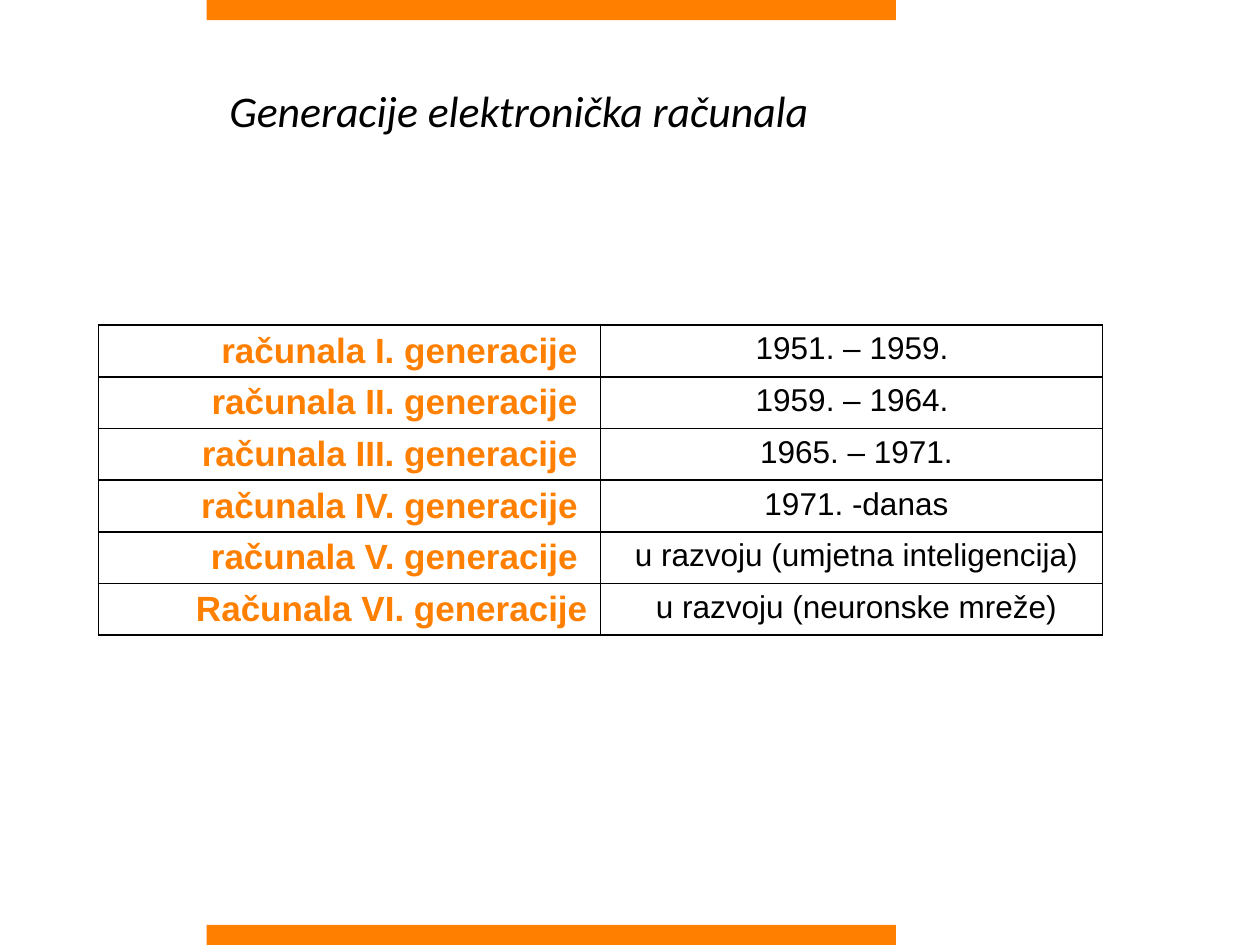
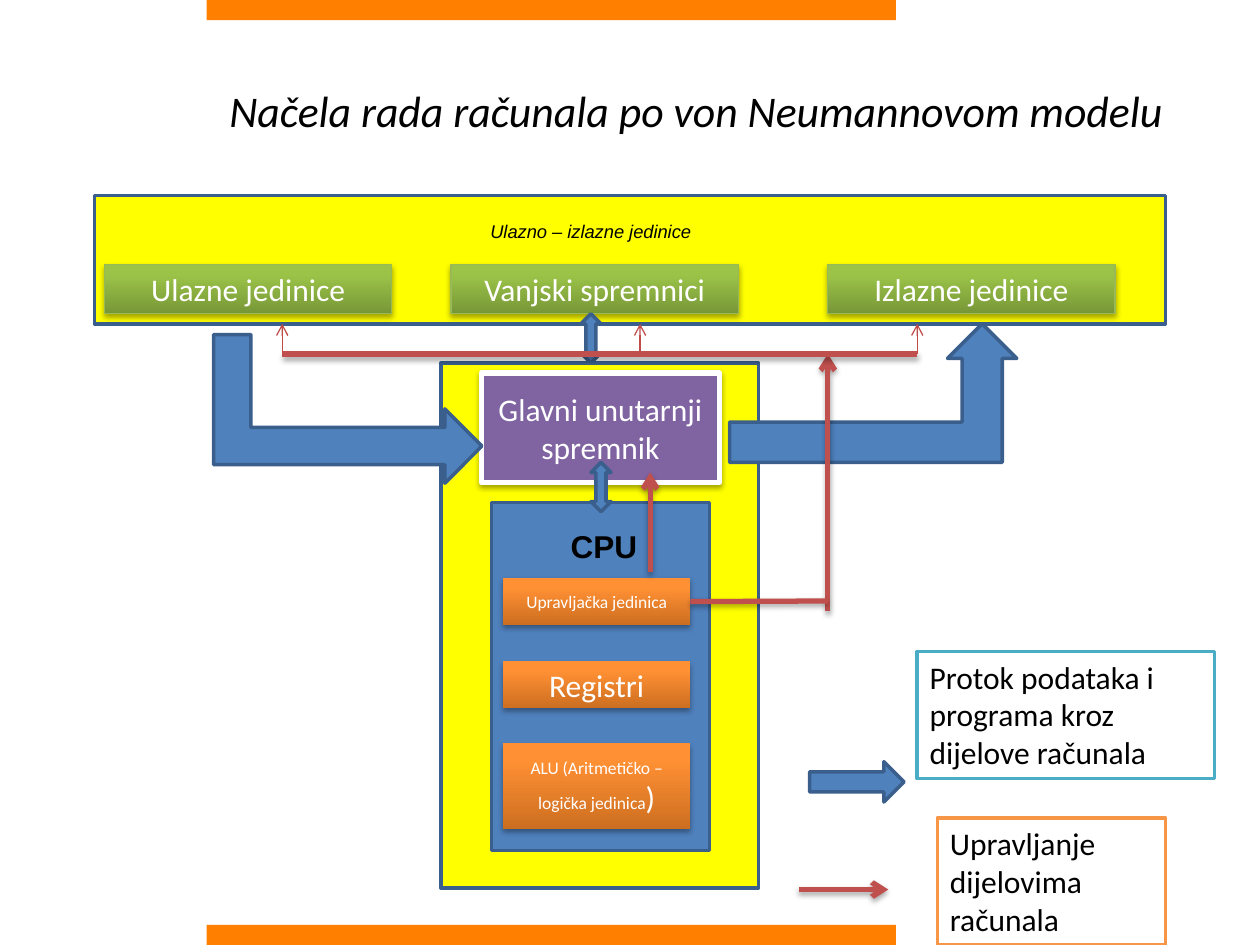
from pptx import Presentation
from pptx import util as u
from pptx.dml.color import RGBColor
from pptx.enum import shapes, text
from pptx.oxml import parse_xml
from pptx.oxml.ns import nsdecls

PX = u.Inches(1) // 100
ORANGE, YELLOW, WHITE, BLACK = "FF7F00", "FFFF00", "FFFFFF", "000000"
BLUE, NAVY, RED, DARK_RED = "4F81BD", "3A5F8C", "C0504D", "BF4C48"
GREEN_BLEND, ORANGE_BLEND = ("779737", "9BC348"), ("CC6E20", "FF9034")
SHADOW = (
    f'<a:effectLst {nsdecls("a")}><a:outerShdw blurRad="40000" dist="23000" dir="5400000" '
    'rotWithShape="0"><a:srgbClr val="000000"><a:alpha val="35000"/></a:srgbClr>'
    '</a:outerShdw></a:effectLst>'
)
FLAT = f'<a:effectLst {nsdecls("a")}/>'
ARROWHEAD = f'<a:tailEnd {nsdecls("a")} type="arrow"/>'

rgb = RGBColor.from_string
kinds = shapes.MSO_SHAPE
align = text.PP_ALIGN
anchor = text.MSO_ANCHOR


def add_box(parent, kind, at, fill, line=None, weight=2, shadow=False):
    box = parent.add_shape(kind, *[n * PX for n in at])
    if isinstance(fill, tuple):
        box.fill.gradient()
        box.fill.gradient_angle = 90
        for stop, color in zip(box.fill.gradient_stops, fill):
            stop.color.rgb = rgb(color)
        box.fill.gradient_stops[1].position = 0.8
    else:
        box.fill.solid()
        box.fill.fore_color.rgb = rgb(fill)
    if line:
        box.line.color.rgb = rgb(line)
        box.line.width = u.Pt(weight)
    else:
        box.line.fill.background()
    box._element.spPr.append(parse_xml(SHADOW if shadow else FLAT))
    return box


def write(frame, runs, color=BLACK, side=align.LEFT, font="Calibri", bold=False, italic=False):
    frame.word_wrap = True
    para = frame.paragraphs[0]
    para.alignment = side
    for words, size in runs:
        span = para.add_run()
        span.text = words
        span.font.name = font
        span.font.size = u.Pt(size)
        span.font.bold = bold
        span.font.italic = italic
        span.font.color.rgb = rgb(color)
    return para


deck = Presentation()
deck.slide_width, deck.slide_height = 1000 * PX, 750 * PX

pages = []
for heading, width in [
    ("Generacije elektronička računala", 625),
    ("Načela rada računala po von Neumannovom modelu", 808),
]:
    page = deck.slides.add_slide(deck.slide_layouts[5])
    title = page.shapes.title
    title.left, title.top, title.width, title.height = [n * PX for n in (172, 47, width, 80)]
    title.text_frame.vertical_anchor = anchor.MIDDLE
    write(title.text_frame, [(heading, 25)], italic=True)
    for top in (0, 734):
        add_box(page.shapes, kinds.RECTANGLE, (164, top, 547, 16), ORANGE)
    pages.append(page)
generations_page, model_page = pages

generations = [
    ("računala I. generacije ", "1951. – 1959. "),
    ("računala II. generacije ", "1959. – 1964. "),
    ("računala III. generacije ", "1965. – 1971."),
    ("računala IV. generacije ", "1971. -danas"),
    ("računala V. generacije ", "u razvoju (umjetna inteligencija)"),
    ("Računala VI. generacije", "u razvoju (neuronske mreže)"),
]
table = generations_page.shapes.add_table(
    len(generations), 2, 78 * PX, 258 * PX, 797 * PX, 41 * len(generations) * PX
).table
table.first_row = table.horz_banding = False
for row, (generation, years) in enumerate(generations):
    name_cell, years_cell = table.cell(row, 0), table.cell(row, 1)
    para = write(name_cell.text_frame, [(generation, 20)], ORANGE, align.RIGHT, "Arial", bold=True)
    para.space_before = para.space_after = u.Pt(6)
    para = write(years_cell.text_frame, [(years, 18)], BLACK, align.CENTER, "Arial")
    para._p.get_or_add_pPr().set("marL", str(8 * PX))
    for cell in (name_cell, years_cell):
        props = cell._tc.get_or_add_tcPr()
        for edge in ("lnL", "lnR", "lnT", "lnB"):
            props.append(parse_xml(
                f'<a:{edge} {nsdecls("a")} w="12700"><a:solidFill>'
                f'<a:srgbClr val="{BLACK}"/></a:solidFill></a:{edge}>'
            ))
        cell.fill.background()

parts = model_page.shapes
add_box(parts, kinds.RECTANGLE, (75, 155, 850, 102), YELLOW, NAVY)
caption = parts.add_textbox(*[n * PX for n in (209, 170, 520, 28)])
write(caption.text_frame, [("Ulazno – izlazne jedinice", 10.5)],
      side=align.CENTER, font="Arial", italic=True)
for left, unit in [(83, "Ulazne jedinice"), (358, "Vanjski spremnici"), (657, "Izlazne jedinice")]:
    box = add_box(parts, kinds.RECTANGLE, (left, 210, 228, 39), GREEN_BLEND, "98B955", 0.75, True)
    write(box.text_frame, [(unit, 18)], WHITE, align.CENTER)

add_box(parts, kinds.RECTANGLE, (350, 288, 252, 417), YELLOW, NAVY)
memory = add_box(parts, kinds.RECTANGLE, (382, 296, 189, 87), "8064A2", WHITE, 3, True)
write(memory.text_frame, [("Glavni unutarnji spremnik", 18)], WHITE, align.CENTER)

cpu = parts.add_group_shape().shapes
add_box(cpu, kinds.RECTANGLE, (390, 399, 173, 276), BLUE, NAVY)
cpu_boxes = []
for top, height, runs in [
    (459, 37, [("Upravljačka jedinica", 10)]),
    (525, 37, [("Registri", 18)]),
    (590, 68, [("ALU (Aritmetičko –logička jedinica", 10), (")", 18)]),
]:
    box = add_box(cpu, kinds.RECTANGLE, (399, top, 149, height), ORANGE_BLEND, shadow=True)
    write(box.text_frame, runs, WHITE, align.CENTER)
    cpu_boxes.append(box)
control_unit = cpu_boxes[0]
cpu_label = cpu.add_textbox(*[n * PX for n in (443, 413, 82, 24)])
write(cpu_label.text_frame, [("CPU", 18)], font="Arial", bold=True)

for kind, at, turn, adjustments in [
    (kinds.UP_DOWN_ARROW, (461, 249, 16, 39), 0, []),
    (kinds.UP_DOWN_ARROW, (469, 367, 16, 39), 0, []),
    (kinds.BENT_UP_ARROW, (217, 218, 118, 213), 90, []),
    (kinds.BENT_UP_ARROW, (579, 257, 228, 110), 0, [0.29, 0.25, 0.25]),
    (kinds.DOWN_ARROW, (664, 583, 32, 75), 270, []),
]:
    arrow = add_box(parts, kind, at, BLUE, NAVY)
    arrow.rotation = turn
    for index, value in enumerate(adjustments):
        arrow.adjustments[index] = value

for ends, thick, pointed, source in [
    ((657, 485, 657, 281), True, True, None),
    ((224, 281, 728, 281), True, False, None),
    ((224, 281, 224, 257), False, True, None),
    ((508, 281, 508, 257), False, True, None),
    ((728, 281, 728, 257), False, True, None),
    ((548, 478, 657, 477), True, False, control_unit),
    ((516, 454, 516, 375), True, True, None),
    ((634, 706, 705, 706), True, True, None),
]:
    line = parts.add_connector(shapes.MSO_CONNECTOR.STRAIGHT, *[n * PX for n in ends])
    if source:
        line.begin_connect(source, 3)
    line.line.color.rgb = rgb(RED if thick else DARK_RED)
    line.line.width = u.Pt(3 if thick else 0.75)
    if pointed:
        line.line._get_or_add_ln().append(parse_xml(ARROWHEAD))
    line._element.spPr.append(parse_xml(SHADOW if thick else FLAT))

for at, color, meaning in [
    ((728, 517, 236, 101), "4BACC6", "Protok podataka i programa kroz dijelove računala"),
    ((744, 649, 181, 101), "F79646", "Upravljanje dijelovima računala"),
]:
    legend = add_box(parts, kinds.RECTANGLE, at, WHITE, color)
    legend.text_frame.vertical_anchor = anchor.TOP
    write(legend.text_frame, [(meaning, 18)])

deck.save("out.pptx")
